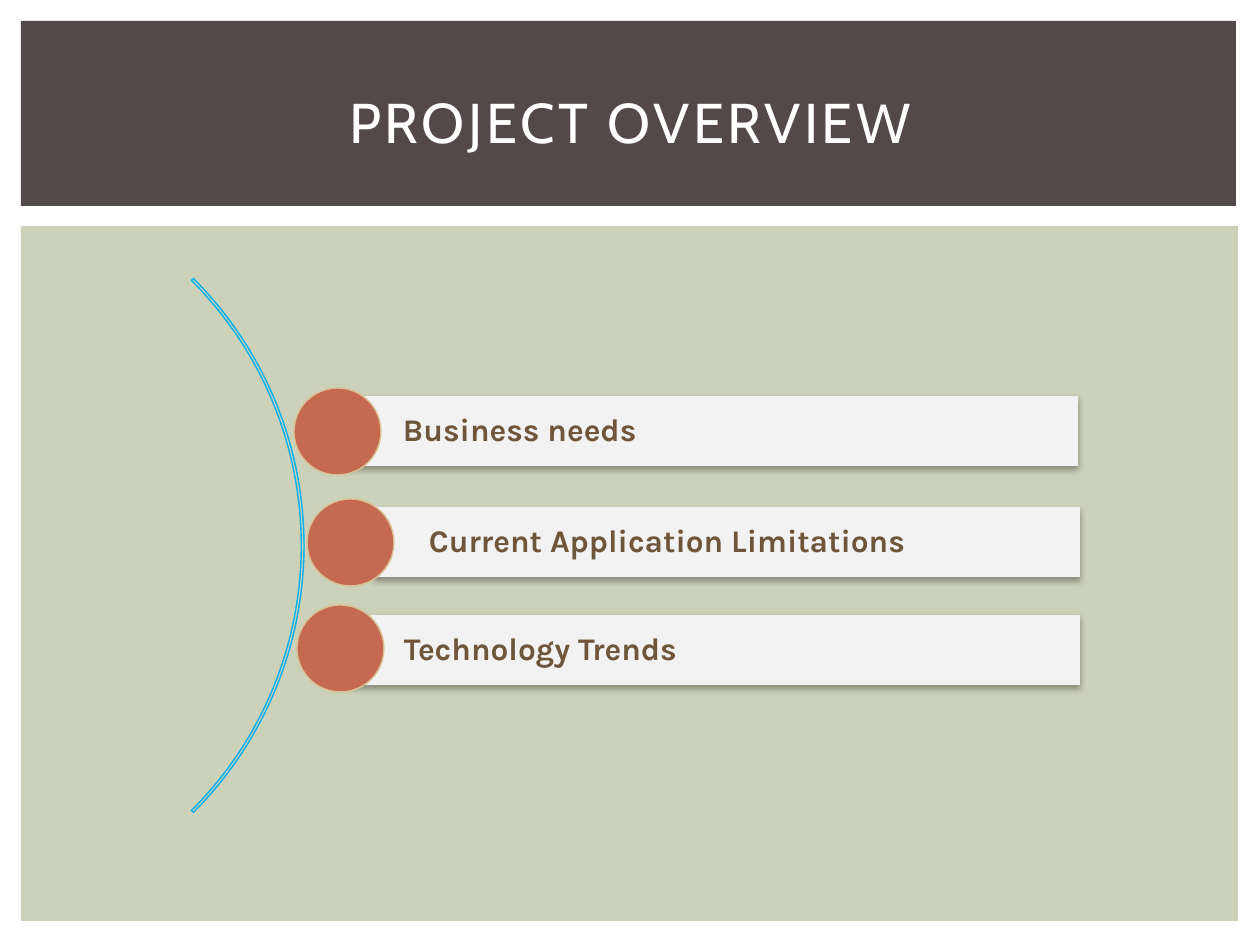
from lxml.etree import SubElement
from pptx import Presentation
from pptx.dml.color import RGBColor
from pptx.enum.shapes import MSO_SHAPE as Shape
from pptx.enum.text import MSO_ANCHOR as Anchor, PP_ALIGN as Align
from pptx.oxml.ns import qn
from pptx.util import Emu, Pt

EMU_PER_PX = 914400 / 126
SLIDE_WIDTH, SLIDE_HEIGHT = 1260, 945

WHITE = RGBColor(0xFF, 0xFF, 0xFF)
BLACK = RGBColor(0x00, 0x00, 0x00)
SAGE = RGBColor(0xCC, 0xD1, 0xB9)
UMBER = RGBColor(0x53, 0x49, 0x49)
SKY = RGBColor(0x00, 0xB0, 0xF0)
PALE = RGBColor(0xF2, 0xF2, 0xF2)
BROWN = RGBColor(0x6F, 0x56, 0x3B)
RUST = RGBColor(0xC6, 0x69, 0x51)
SAND = RGBColor(0xD9, 0xC1, 0x94)

TITLE_FONT = {"name": "Cabin", "size": Pt(32)}
TOPIC_FONT = {"name": "Karla", "size": Pt(18), "bold": True}
BAR_FRAME = {"margin_left": 55, "margin_right": 6, "margin_top": 6, "margin_bottom": 6}

BAR_HEIGHT = 70
DOT_SIZE = 87
# Topic, bar left, bar top, bar width, dot left, dot top; relative to the content panel
TOPICS = [
    ("Business needs", 327, 170, 730, 273, 162),
    ("Current Application Limitations", 353, 281, 706, 286, 273),
    ("Technology Trends", 328, 389, 731, 276, 379),
]


def px(length):
    return Emu(round(length * EMU_PER_PX))


def add_block(slide, kind, box, fill=None, line=None):
    block = slide.shapes.add_shape(kind, *map(px, box))
    block.shadow.inherit = False
    if fill is None:
        block.fill.background()
    else:
        block.fill.solid()
        block.fill.fore_color.rgb = fill
    if line is None:
        block.line.fill.background()
    else:
        block.line.color.rgb = line
        block.line.width = Pt(0.79)
    return block


def write(frame, words, font, color, align):
    """Put one vertically centred line into a text frame and return its run."""
    frame.word_wrap = True
    frame.vertical_anchor = Anchor.MIDDLE
    paragraph = frame.paragraphs[0]
    paragraph.alignment = align
    run = paragraph.add_run()
    run.text = words
    for attribute, value in font.items():
        setattr(run.font, attribute, value)
    run.font.color.rgb = color
    return run


def add_drop_shadow(block):
    effects = block._element.spPr.find(qn("a:effectLst"))
    shadow = SubElement(effects, qn("a:outerShdw"), blurRad=str(Pt(3.5)),
                        dist=str(Pt(2.2)), dir="5400000", rotWithShape="0")
    tint = SubElement(shadow, qn("a:srgbClr"), val=str(BLACK))
    SubElement(tint, qn("a:alpha"), val="32000")


def add_title_band(slide, box):
    left, top, width, _ = box
    add_block(slide, Shape.RECTANGLE, box, UMBER)
    title = slide.shapes.add_textbox(px(left + 32), px(top + 28), px(width - 60), px(145))
    run = write(title.text_frame, "PROJECT OVERVIEW", TITLE_FONT, WHITE, Align.CENTER)
    run.font._element.set("spc", "200")


def add_topic(slide, origin, topic, bar_left, bar_top, bar_width, dot_left, dot_top):
    """Add a labelled bar with a round marker over its left end."""
    left, top = origin
    bar = add_block(slide, Shape.RECTANGLE,
                    (left + bar_left, top + bar_top, bar_width, BAR_HEIGHT), PALE)
    add_drop_shadow(bar)
    for margin, length in BAR_FRAME.items():
        setattr(bar.text_frame, margin, px(length))
    write(bar.text_frame, topic, TOPIC_FONT, BROWN, Align.LEFT)
    bar.text_frame.paragraphs[0].line_spacing = 0.9
    add_block(slide, Shape.OVAL,
              (left + dot_left, top + dot_top, DOT_SIZE, DOT_SIZE), RUST, SAND)


def add_content_panel(slide, box):
    left, top = box[:2]
    add_block(slide, Shape.RECTANGLE, box, SAGE)
    arc = add_block(slide, Shape.BLOCK_ARC, (left - 472, top - 58, 755, 755), line=SKY)
    for index, value in enumerate((189, 27, 0.0036)):
        arc.adjustments[index] = value
    for topic in TOPICS:
        add_topic(slide, (left, top), *topic)


def main():
    deck = Presentation()
    deck.slide_width, deck.slide_height = px(SLIDE_WIDTH), px(SLIDE_HEIGHT)
    slide = deck.slides.add_slide(deck.slide_layouts[6])
    add_title_band(slide, (21, 21, 1215, 185))
    add_content_panel(slide, (21, 226, 1217, 695))
    deck.save("out.pptx")


if __name__ == "__main__":
    main()
